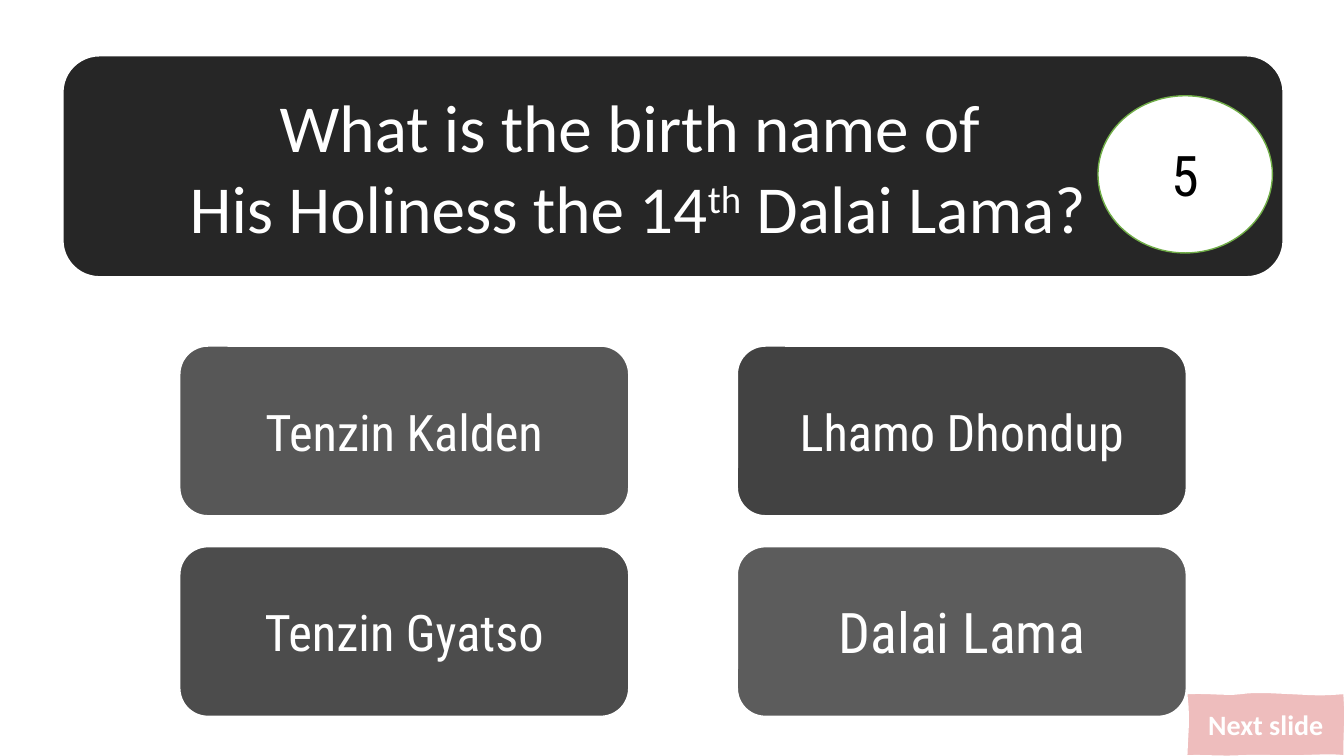
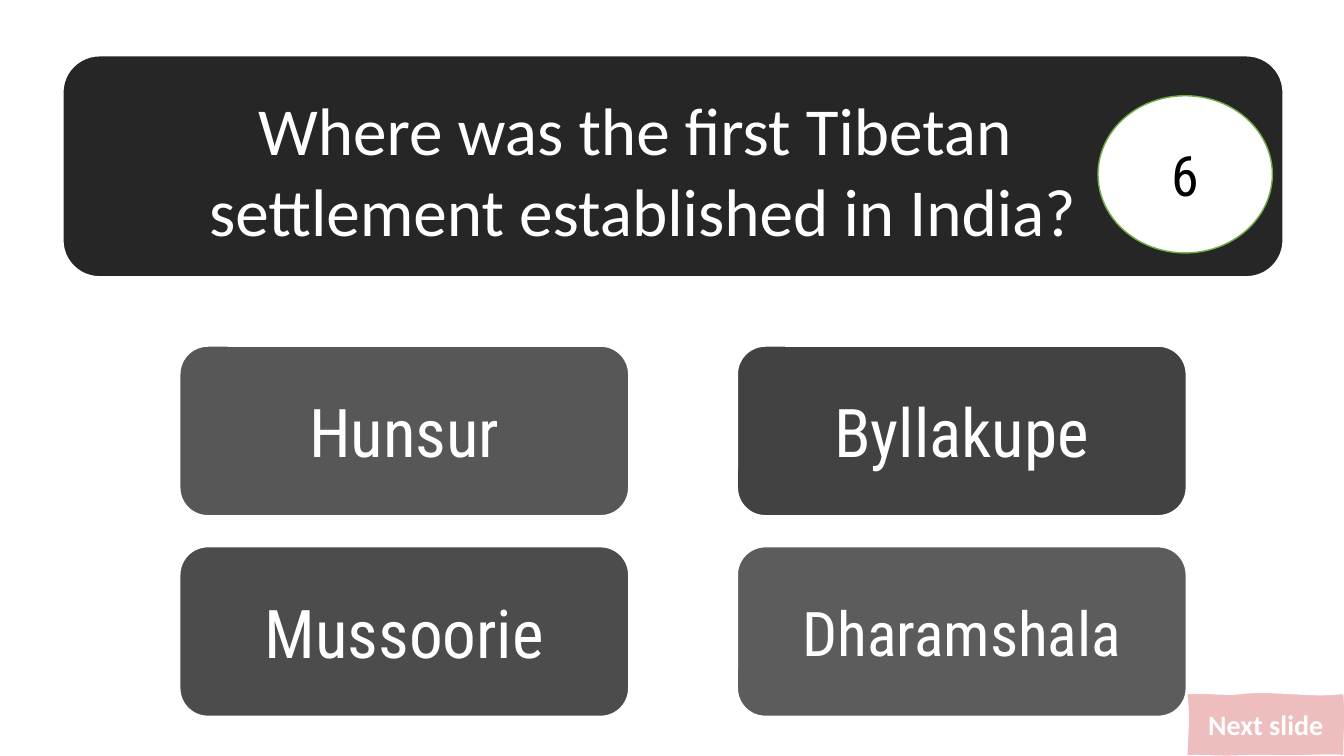
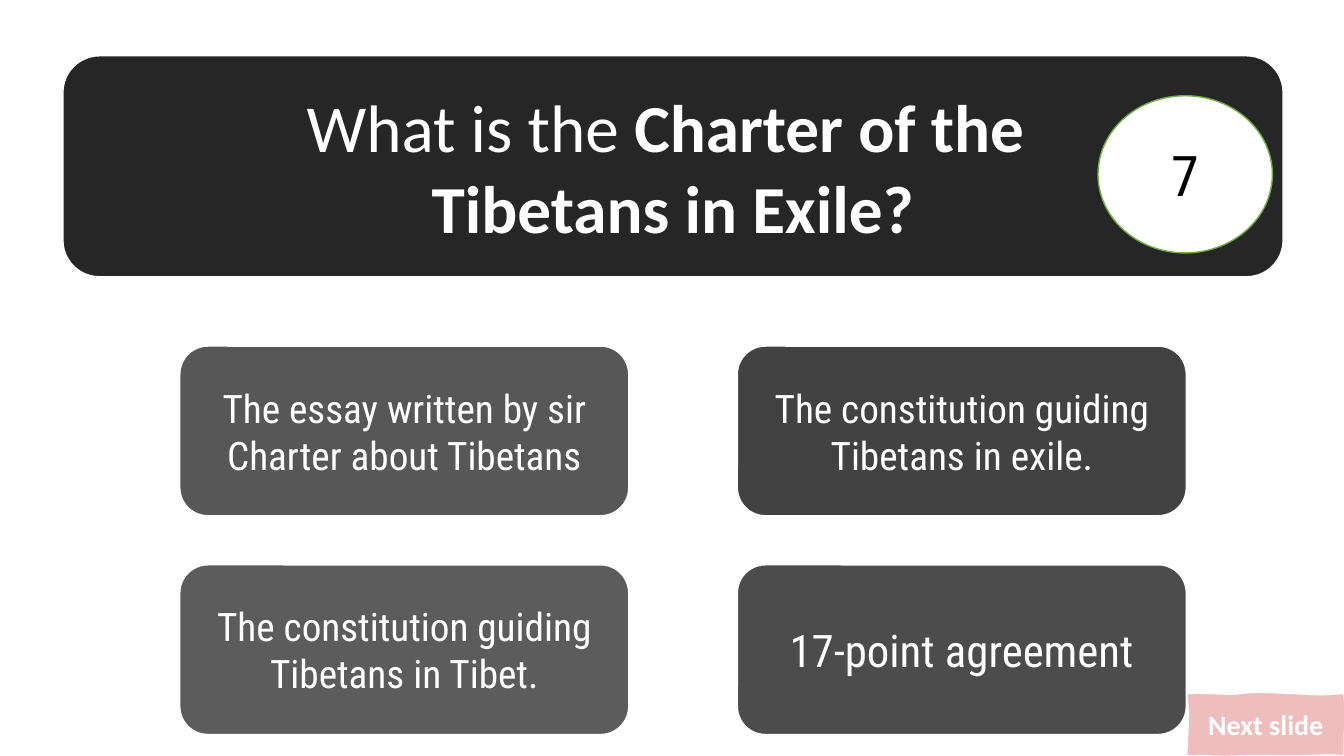
from collections import namedtuple

from pptx import Presentation
from pptx.dml.color import RGBColor
from pptx.enum.shapes import MSO_SHAPE as Shape
from pptx.enum.text import MSO_ANCHOR as Anchor, PP_ALIGN as Align
from pptx.oxml.ns import qn
from pptx.oxml.xmlchemy import OxmlElement
from pptx.util import Inches, Pt

Box = namedtuple("Box", "left top width height")
Question = namedtuple("Question", "number lines insets answers shades row_gap")

WHITE, BLACK, GREEN, RED = "FFFFFF", "000000", "70AD47", "C00000"
TITLE_FONT, ANSWER_FONT = "Calibri", "Roboto Condensed"

BANNER = Box(0.62, 0.55, 12.11, 2.2)
ANSWERS = Box(1.78, 3.43, 9.99, 1.69)
ANSWER_WIDTH = 4.46
NEXT_TAG = Box(11.77, 6.88, 1.56, 0.62)

TAG_CURVES = [
    [(0.24, -0.01), (0.40, 0.02), (0.54, 0)],
    [(0.67, -0.02), (0.81, -0.01), (1.03, 0)],
    [(1.24, 0.01), (1.33, 0.02), (1.56, 0)],
    [(1.58, 0.29), (1.56, 0.32), (1.56, 0.62)],
    [(1.45, 0.60), (1.24, 0.62), (1.01, 0.62)],
    [(0.79, 0.62), (0.75, 0.61), (0.52, 0.62)],
    [(0.29, 0.63), (0.17, 0.61), (0, 0.62)],
    [(0.01, 0.31), (0.03, 0.29), (0, 0)],
]

QUESTIONS = [
    Question(
        "5",
        [[("What is the birth name of ", "")],
         [("His Holiness the 14", ""), ("th", "super"), (" Dalai Lama?", "")]],
        (0, 0.05, 0.7, 0.05),
        [("Tenzin Kalden", 36), ("Lhamo Dhondup", 36),
         ("Tenzin Gyatso", 36), ("Dalai Lama", 40)],
        (66, 74, 70, 64), 0.3),
    Question(
        "6",
        [[("Where was the first Tibetan ", "")],
         [("settlement established in India?", "")]],
        (0, 0.1, 0.6, 0.05),
        [("Hunsur", 48), ("Byllakupe", 48),
         ("Mussoorie", 48), ("Dharamshala", 44)],
        (66, 74, 70, 64), 0.3),
    Question(
        "7",
        [[("What is the ", ""), ("Charter of the ", "bold")],
         [("Tibetans in Exile?", "bold")]],
        (0.1, 0.05, 0.1, 0.05),
        [("The essay written by sir Charter about Tibetans", 28),
         ("The constitution guiding Tibetans in exile.", 28),
         ("The constitution guiding Tibetans in Tibet.", 28),
         ("17-point agreement", 32)],
        (66, 74, 64, 70), 0.48),
]


def color(value):
    return RGBColor.from_string(value)


def paint(shape, fill, line, line_width, opacity=100):
    shape.shadow.inherit = False
    shape.fill.solid()
    shape.fill.fore_color.rgb = color(fill)
    shape.line.color.rgb = color(line)
    shape.line.width = Pt(line_width)
    if opacity < 100:
        alpha = OxmlElement("a:alpha")
        alpha.set("val", str(opacity * 1000))
        shape._element.spPr.find(qn("a:solidFill"))[0].append(alpha)


def write(shape, lines, font, size, ink=WHITE, bold=False):
    frame = shape.text_frame
    frame.word_wrap = True
    frame.vertical_anchor = Anchor.MIDDLE
    for index, line in enumerate(lines):
        para = frame.add_paragraph() if index else frame.paragraphs[0]
        para.alignment = Align.CENTER
        para.font.name = font
        para.font.size = Pt(size)
        para.font.bold = bold
        para.font.color.rgb = color(ink)
        for text, style in line:
            span = para.add_run()
            span.text = text
            if style == "bold":
                span.font.bold = True
            elif style == "super":
                span._r.get_or_add_rPr().set("baseline", "30000")


def add_preset(page, kind, box):
    return page.shapes.add_shape(kind, *map(Inches, box))


def add_banner(page, box, question):
    banner = add_preset(page, Shape.ROUNDED_RECTANGLE, box)
    paint(banner, BLACK, WHITE, 1.5, 85)
    write(banner, question.lines, TITLE_FONT, 48)
    frame = banner.text_frame
    (frame.margin_left, frame.margin_top,
     frame.margin_right, frame.margin_bottom) = map(Inches, question.insets)

    badge = add_preset(page, Shape.OVAL,
                       Box(box.left + 10.27, box.top + 0.4, 1.73, 1.56))
    paint(badge, WHITE, GREEN, 1)
    write(badge, [[(question.number, "")]], ANSWER_FONT, 40, BLACK)


def add_answers(page, box, question):
    column_step = box.width - ANSWER_WIDTH
    row_step = box.height + question.row_gap
    for index, (text, size) in enumerate(question.answers):
        row, column = divmod(index, 2)
        answer = add_preset(page, Shape.ROUNDED_RECTANGLE,
                            Box(box.left + column * column_step,
                                box.top + row * row_step,
                                ANSWER_WIDTH, box.height))
        paint(answer, BLACK, WHITE, 1.5, question.shades[index])
        write(answer, [[(text, "")]], ANSWER_FONT, size)


def curve_points(start, curve, steps=6):
    for step in range(1, steps + 1):
        t = step / steps
        weights = ((1 - t) ** 3, 3 * t * (1 - t) ** 2, 3 * t * t * (1 - t), t ** 3)
        yield tuple(sum(weight * point[axis]
                        for weight, point in zip(weights, (start, *curve)))
                    for axis in (0, 1))


def add_next_tag(page, box):
    points = []
    start = (0, 0)
    for curve in TAG_CURVES:
        points.extend(curve_points(start, curve))
        start = curve[-1]
    builder = page.shapes.build_freeform(Inches(box.left), Inches(box.top))
    builder.add_line_segments(
        [(Inches(box.left + x), Inches(box.top + y)) for x, y in points])
    tag = builder.convert_to_shape()
    paint(tag, RED, WHITE, 1, 26)
    write(tag, [[("Next slide", "")]], TITLE_FONT, 20, bold=True)


def main():
    deck = Presentation()
    deck.slide_width, deck.slide_height = Inches(13.33), Inches(7.5)
    for question in QUESTIONS:
        page = deck.slides.add_slide(deck.slide_layouts[6])
        add_banner(page, BANNER, question)
        add_answers(page, ANSWERS, question)
        add_next_tag(page, NEXT_TAG)
    deck.save("out.pptx")


if __name__ == "__main__":
    main()
